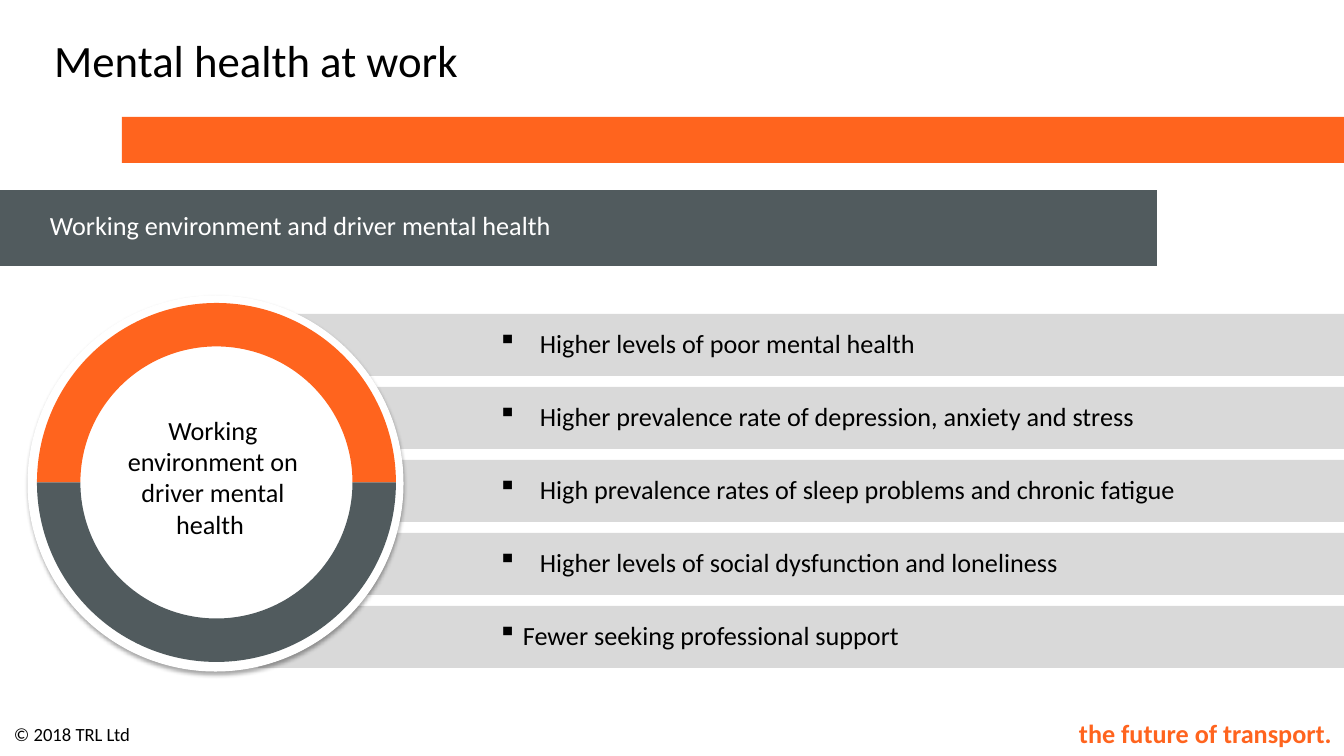
from dataclasses import dataclass

from lxml import etree
from pptx import Presentation
from pptx.dml.color import RGBColor
from pptx.enum.shapes import MSO_SHAPE
from pptx.enum.text import MSO_ANCHOR, PP_ALIGN
from pptx.oxml import parse_xml
from pptx.oxml.ns import qn
from pptx.util import Pt

RECT, OVAL, ARC = MSO_SHAPE.RECTANGLE, MSO_SHAPE.OVAL, MSO_SHAPE.BLOCK_ARC
LEFT, CENTER, RIGHT = PP_ALIGN.LEFT, PP_ALIGN.CENTER, PP_ALIGN.RIGHT
TOP, MIDDLE = MSO_ANCHOR.TOP, MSO_ANCHOR.MIDDLE
TITLE_ONLY = 5
WIDTH, HEIGHT = 1344, 756
SHADOW = (
    '<a:effectLst xmlns:a="http://schemas.openxmlformats.org/drawingml/2006/main">'
    '<a:outerShdw blurRad="40000" dist="23000" dir="5400000" rotWithShape="0">'
    '<a:srgbClr val="000000"><a:alpha val="35000"/></a:srgbClr>'
    '</a:outerShdw></a:effectLst>')


@dataclass(frozen=True)
class Theme:
    font: str = "Calibri"
    black: str = "000000"
    white: str = "FFFFFF"
    orange: str = "FF641E"
    slate: str = "515B5E"
    grey: str = "D9D9D9"
    title: float = 32
    body: float = 18.7
    small: float = 13.3


def px(n):
    return round(n * 914400 / 100.8)


class Deck:
    def __init__(self, theme):
        self.theme = theme
        self.prs = Presentation()
        self.prs.slide_width, self.prs.slide_height = px(WIDTH), px(HEIGHT)
        self.s = self.prs.slides.add_slide(self.prs.slide_layouts[TITLE_ONLY])

    def add_run(self, tf, text, size, color, align=LEFT, anchor=TOP, bold=False):
        tf.word_wrap = True
        tf.vertical_anchor = anchor
        p = tf.paragraphs[0]
        p.alignment = align
        r = p.add_run()
        r.text = text
        r.font.name, r.font.size, r.font.bold = self.theme.font, Pt(size), bold
        r.font.color.rgb = RGBColor.from_string(color)
        return p

    def title(self, text, x, y, w, h):
        sp = self.s.shapes.title
        sp.left, sp.top, sp.width, sp.height = map(px, (x, y, w, h))
        self.add_run(sp.text_frame, text, self.theme.title, self.theme.black,
                     anchor=MIDDLE)

    def text(self, text, x, y, w, h, size=None, color=None, **style):
        sp = self.s.shapes.add_textbox(*map(px, (x, y, w, h)))
        return self.add_run(sp.text_frame, text, size or self.theme.body,
                            color or self.theme.black, **style)

    def bullet(self, text, x, y, w, h, indent):
        pPr = self.text(text, x, y, w, h)._p.get_or_add_pPr()
        pPr.set("marL", str(px(indent)))
        pPr.set("indent", str(-px(indent)))
        etree.SubElement(pPr, qn("a:buChar")).set("char", "▪")

    def shape(self, kind, x, y, w, h, fill, parent=None, line=None):
        shapes = (parent or self.s).shapes
        sp = shapes.add_shape(kind, *map(px, (x, y, w, h)))
        sp.shadow.inherit = False
        sp.fill.solid()
        sp.fill.fore_color.rgb = RGBColor.from_string(fill)
        if line:
            sp.line.color.rgb = RGBColor.from_string(line)
            sp.line.width = Pt(0.75)
        else:
            sp.line.fill.background()
        return sp

    def ring(self, x, y, size):
        t = self.theme
        group = self.s.shapes.add_group_shape()
        disc = self.shape(OVAL, x, y, size, size, t.white, group, t.white)
        spPr = disc._element.spPr
        spPr.replace(spPr.find(qn("a:effectLst")), parse_xml(SHADOW))
        # Angles are in hundred-thousands of 1/60000 degree: 108 is 180 degrees
        for fill, start, end in ((t.orange, 108, 0), (t.slate, 0, 108)):
            arc = self.shape(ARC, x + 9, y + 7, size - 16, size - 16, fill, group)
            for i, value in enumerate((start, end, 0.121)):
                arc.adjustments[i] = value


def main():
    t = Theme()
    deck = Deck(t)

    # Footer
    deck.text("the future of transport.", 1050, 712, 292, 42,
              color=t.orange, align=RIGHT, bold=True)
    deck.text("© 2018 TRL Ltd", 4, 718, 220, 33, size=t.small, anchor=MIDDLE)

    # Title and header bands
    deck.title("Mental health at work", 44, 14, 1006, 91)
    deck.shape(RECT, 122, 117, WIDTH - 122, 46, t.orange)
    deck.shape(RECT, 0, 190, 1157, 76, t.slate)
    deck.text("Working environment and driver mental health",
              40, 204, 1190, 49, color=t.white)

    # Effects, one grey bar each
    effects = (
        ("Higher levels of poor mental health", 42),
        ("Higher prevalence rate of depression, anxiety and stress", 42),
        ("High prevalence rates of sleep problems and chronic fatigue", 42),
        ("Higher levels of social dysfunction and loneliness", 42),
        ("Fewer seeking professional support", 25),
    )
    for i, (effect, indent) in enumerate(effects):
        y = 314 + 73 * i
        deck.shape(RECT, 258, y, WIDTH - 258, 62, t.grey)
        deck.bullet(effect, 488, y + 8, 854, 42, indent)

    # Ring with the cause inside
    deck.ring(28, 296, 375)
    deck.text("Working environment on driver mental health ",
              101, 409, 224, 137, align=CENTER)

    deck.prs.save("out.pptx")


if __name__ == "__main__":
    main()
